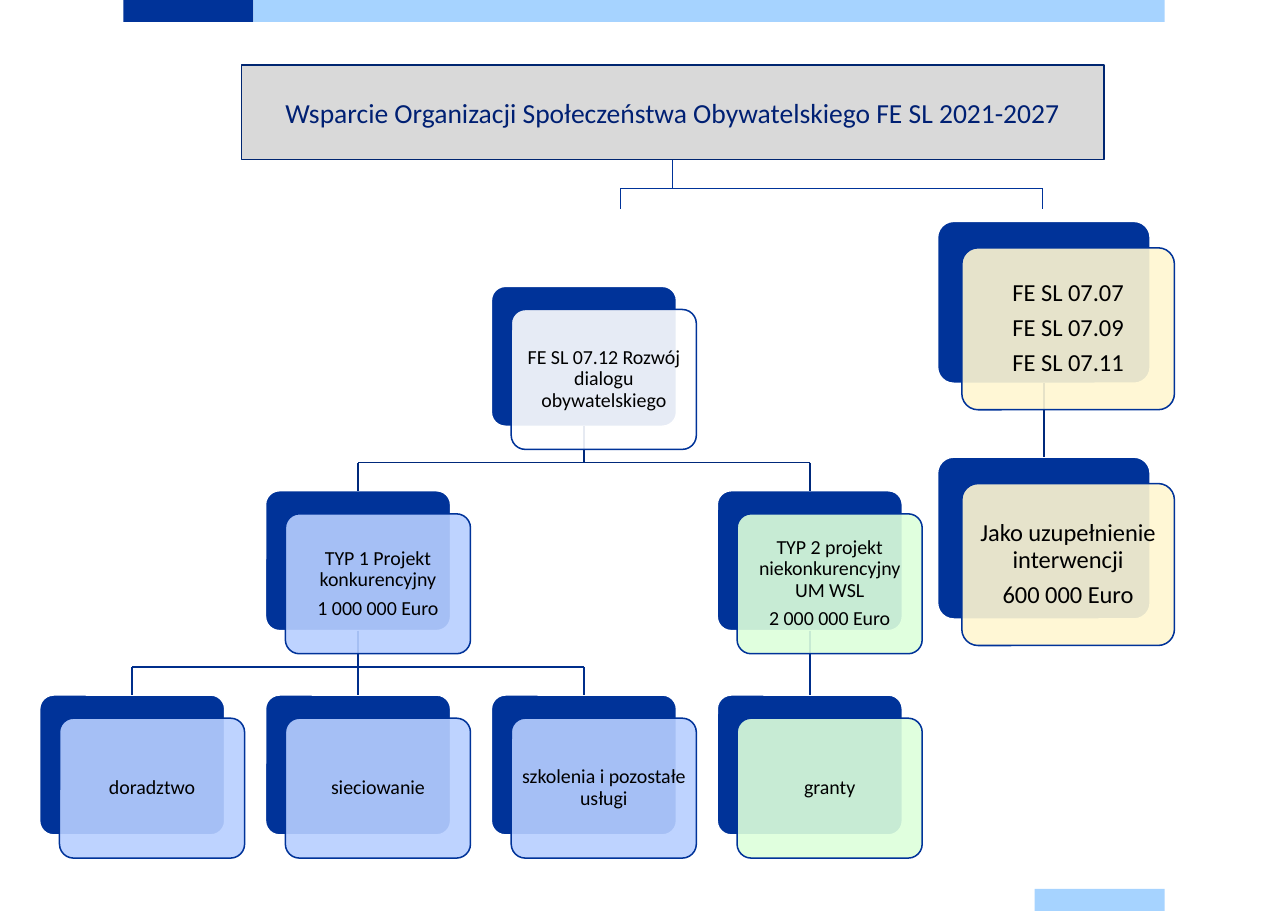
from lxml import etree
from pptx import Presentation
from pptx import util as u
from pptx.dml.color import RGBColor
from pptx.enum import shapes, text
from pptx.oxml.ns import qn

COLOURS = {
    "navy": "003399", "sky": "A6D3FF", "white": "FFFFFF", "black": "000000",
    "grey": "D9D9D9", "title_line": "002671", "title_text": "002073",
    "upper_link": "00297B", "lower_link": "002E8B",
    "blue": "B8CFFF", "green": "DDFFDB", "cream": "FFF7D1",
}
COLOURS = {name: RGBColor.from_string(value) for name, value in COLOURS.items()}

presentation = Presentation()
presentation.slide_width = u.Inches(11.69)
presentation.slide_height = u.Inches(8.27)
slide = presentation.slides.add_slide(presentation.slide_layouts[5])


def add_box(kind, left, top, width, height, fill, line=None):
    shape = slide.shapes.add_shape(kind, *map(u.Inches, (left, top, width, height)))
    shape.shadow.inherit = False
    shape.fill.solid()
    shape.fill.fore_color.rgb = COLOURS[fill]
    if line:
        shape.line.color.rgb = COLOURS[line]
        shape.line.width = u.Pt(1)
    else:
        shape.line.fill.background()
    if kind == shapes.MSO_SHAPE.ROUNDED_RECTANGLE:
        shape.adjustments[0] = 0.1
    return shape


def add_link(start, end, colour, upper=None, lower=None):
    connector = slide.shapes.add_connector(shapes.MSO_CONNECTOR.STRAIGHT, *start, *end)
    connector.line.color.rgb = COLOURS[colour]
    connector.line.width = u.Pt(1)
    etree.SubElement(connector._element.spPr, qn("a:effectLst"))
    if upper is not None:
        connector.begin_connect(upper, 2)
    if lower is not None:
        connector.end_connect(lower, 0)


for left, top, width, fill in [(1.12, 0, 1.18, "navy"), (2.3, 0, 8.27, "sky"),
                               (9.39, 8.07, 1.18, "sky")]:
    add_box(shapes.MSO_SHAPE.RECTANGLE, left, top, width, 0.2, fill)

title = slide.shapes.title
title.left, title.top, title.width, title.height = map(u.Inches, (2.19, 0.59, 7.83, 0.86))
geometry = etree.Element(qn("a:prstGeom"), prst="roundRect")
etree.SubElement(geometry, qn("a:avLst"))
title._element.spPr.insert(1, geometry)
title.fill.solid()
title.fill.fore_color.rgb = COLOURS["grey"]
title.line.color.rgb = COLOURS["title_line"]
title.line.width = u.Pt(1)
title.text_frame.text = "Wsparcie Organizacji Społeczeństwa Obywatelskiego FE SL 2021-2027"
title.text_frame.auto_size = text.MSO_AUTO_SIZE.NONE
title.text_frame.vertical_anchor = text.MSO_ANCHOR.MIDDLE
title_paragraph = title.text_frame.paragraphs[0]
title_paragraph.alignment = text.PP_ALIGN.CENTER
title_font = title_paragraph.runs[0].font
title_font.name = "Calibri"
title_font.size = u.Pt(18)
title_font.color.rgb = COLOURS["title_text"]

TREE = {"left": 0.36, "top": 2.6, "column": 2.05, "row": 1.855,
        "width": 1.68, "height": 1.27, "shift": (0.18, 0.21), "size": 13, "inset": 0.04}
SIDE = {"left": 8.51, "top": 2.01, "column": 0, "row": 2.14,
        "width": 1.93, "height": 1.47, "shift": (0.22, 0.24), "size": 16, "inset": 0.07}

cards = {
    "dialogue": (TREE, 2, 0, "white", ["FE SL 07.12 Rozwój dialogu obywatelskiego"]),
    "type 1": (TREE, 1, 1, "blue", ["TYP 1 Projekt konkurencyjny", "1 000 000 Euro"]),
    "type 2": (TREE, 3, 1, "green",
               ["TYP 2 projekt niekonkurencyjny UM WSL", "2 000 000 Euro"]),
    "advice": (TREE, 0, 2, "blue", ["doradztwo"]),
    "networking": (TREE, 1, 2, "blue", ["sieciowanie"]),
    "training": (TREE, 2, 2, "blue", ["szkolenia i pozostałe usługi"]),
    "grants": (TREE, 3, 2, "green", ["granty"]),
    "programmes": (SIDE, 0, 0, "cream", ["FE SL 07.07", "FE SL 07.09", "FE SL 07.11"]),
    "supplement": (SIDE, 0, 1, "cream", ["Jako uzupełnienie interwencji", "600 000 Euro"]),
}
branches = [
    ("dialogue", ["type 1", "type 2"], "upper_link"),
    ("type 1", ["advice", "networking", "training"], "lower_link"),
    ("type 2", ["grants"], "lower_link"),
    ("programmes", ["supplement"], "upper_link"),
]

backs = {}
for name, (grid, column, row, fill, lines) in cards.items():
    backs[name] = add_box(
        shapes.MSO_SHAPE.ROUNDED_RECTANGLE,
        grid["left"] + column * grid["column"], grid["top"] + row * grid["row"],
        grid["width"], grid["height"], "navy", "white")

for parent_name, child_names, colour in branches:
    parent = backs[parent_name]
    children = [backs[name] for name in child_names]
    middle = parent.left + parent.width // 2
    bottom = parent.top + parent.height
    centres = [child.left + child.width // 2 for child in children]
    if len(children) == 1:
        add_link((middle, bottom), (centres[0], children[0].top), colour, parent, children[0])
        continue
    bar = bottom + u.Inches(0.33)
    add_link((middle, bottom), (middle, bar), colour, upper=parent)
    add_link((centres[0], bar), (centres[-1], bar), colour)
    for centre, child in zip(centres, children):
        add_link((centre, bar), (centre, child.top), colour, lower=child)

for grid, column, row, fill, lines in cards.values():
    shift_x, shift_y = grid["shift"]
    card = add_box(
        shapes.MSO_SHAPE.ROUNDED_RECTANGLE,
        grid["left"] + column * grid["column"] + shift_x,
        grid["top"] + row * grid["row"] + shift_y,
        grid["width"], grid["height"], fill, "navy")
    colour_element = card._element.spPr.find(qn("a:solidFill"))[0]
    etree.SubElement(colour_element, qn("a:alpha"), val="90000")
    frame = card.text_frame
    frame.word_wrap = True
    frame.vertical_anchor = text.MSO_ANCHOR.MIDDLE
    frame.margin_left = frame.margin_right = u.Inches(grid["inset"])
    frame.margin_top = frame.margin_bottom = u.Inches(grid["inset"])
    frame.text = "\n".join(lines)
    for paragraph in frame.paragraphs:
        paragraph.alignment = text.PP_ALIGN.CENTER
        paragraph.line_spacing = 0.9
        paragraph.space_after = u.Pt(0.35 * grid["size"])
        font = paragraph.runs[0].font
        font.name = "Calibri"
        font.size = u.Pt(grid["size"])
        font.color.rgb = COLOURS["black"]

title_bar, drop_end = u.Inches(1.71), u.Inches(1.9)
drops = [u.Inches(5.63), u.Inches(9.46)]
title_middle = title.left + title.width // 2
add_link((title_middle, title.top + title.height), (title_middle, title_bar), "navy", upper=title)
add_link((drops[0], title_bar), (drops[1], title_bar), "navy")
for drop in drops:
    add_link((drop, title_bar), (drop, drop_end), "navy")

presentation.save("out.pptx")
